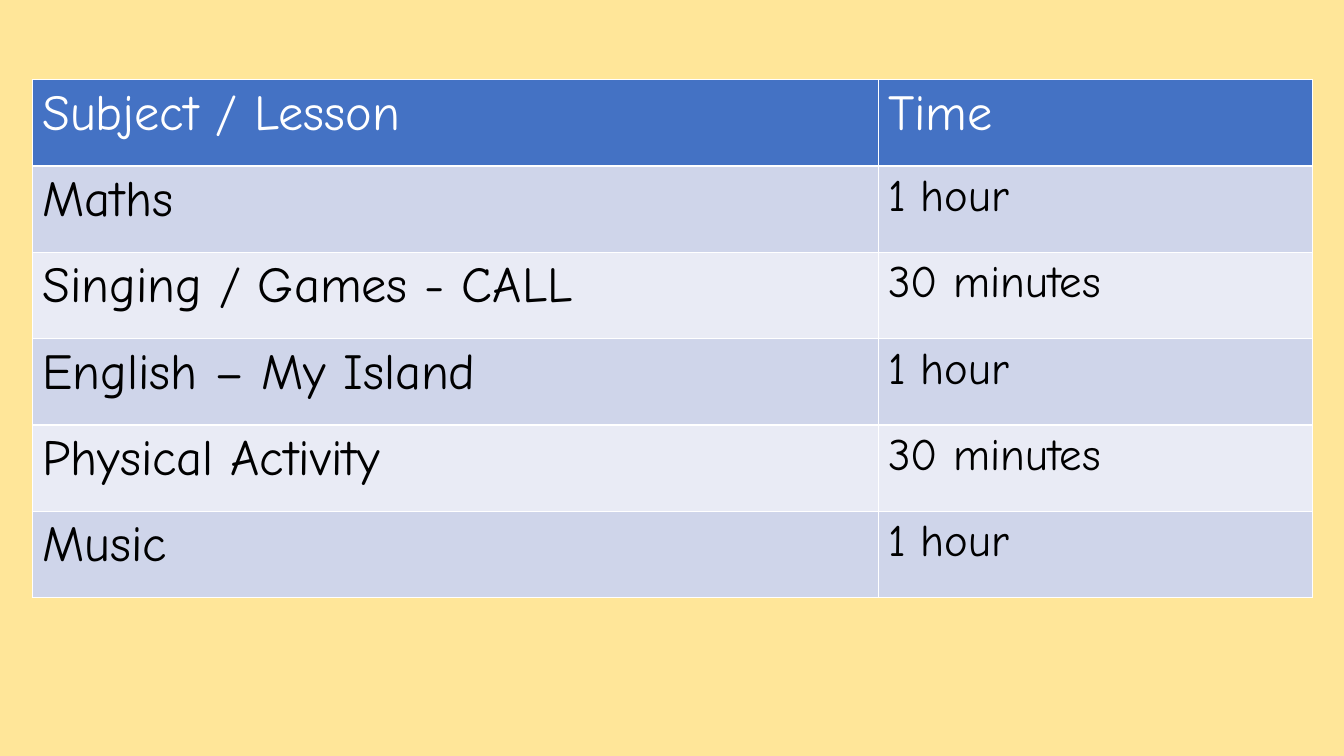
from dataclasses import dataclass

from pptx import Presentation
from pptx.dml.color import RGBColor
from pptx.util import Inches, Pt


@dataclass(frozen=True)
class Theme:
    font: str = "Comic Neue"
    background: RGBColor = RGBColor(0xFF, 0xE6, 0x99)
    header_fill: RGBColor = RGBColor(0x44, 0x72, 0xC4)
    header_text: RGBColor = RGBColor(0xFF, 0xFF, 0xFF)
    odd_fill: RGBColor = RGBColor(0xCF, 0xD5, 0xEA)
    even_fill: RGBColor = RGBColor(0xE9, 0xEB, 0xF5)
    body_text: RGBColor = RGBColor(0x00, 0x00, 0x00)
    large: Pt = Pt(36)
    small: Pt = Pt(32)


theme = Theme()

timetable = [
    ("Subject / Lesson", "Time"),
    ("Maths", "1 hour"),
    ("Singing / Games - CALL", "30 minutes"),
    ("English – My Island", "1 hour"),
    ("Physical Activity", "30 minutes"),
    ("Music", "1 hour"),
]
column_widths = [8.39, 4.31]
row_height = 0.857

# Slide and background
presentation = Presentation()
presentation.slide_width = Inches(13.33)
presentation.slide_height = Inches(7.5)
slide = presentation.slides.add_slide(presentation.slide_layouts[6])
slide.background.fill.solid()
slide.background.fill.fore_color.rgb = theme.background

# Timetable grid; the default table style supplies the white borders
table = slide.shapes.add_table(
    len(timetable), len(column_widths),
    Inches(0.32), Inches(0.79),
    Inches(sum(column_widths)), Inches(row_height * len(timetable)),
).table
for column, width in zip(table.columns, column_widths):
    column.width = Inches(width)

# Cell text and banded fills
for row_index, entries in enumerate(timetable):
    is_header = row_index == 0
    if is_header:
        row_fill = theme.header_fill
    else:
        row_fill = theme.odd_fill if row_index % 2 else theme.even_fill

    for column_index, entry in enumerate(entries):
        cell = table.cell(row_index, column_index)
        cell.fill.solid()
        cell.fill.fore_color.rgb = row_fill
        cell.text_frame.text = entry
        font = cell.text_frame.paragraphs[0].runs[0].font
        font.name = theme.font
        font.bold = False
        font.size = theme.large if is_header or column_index == 0 else theme.small
        font.color.rgb = theme.header_text if is_header else theme.body_text

presentation.save("out.pptx")
